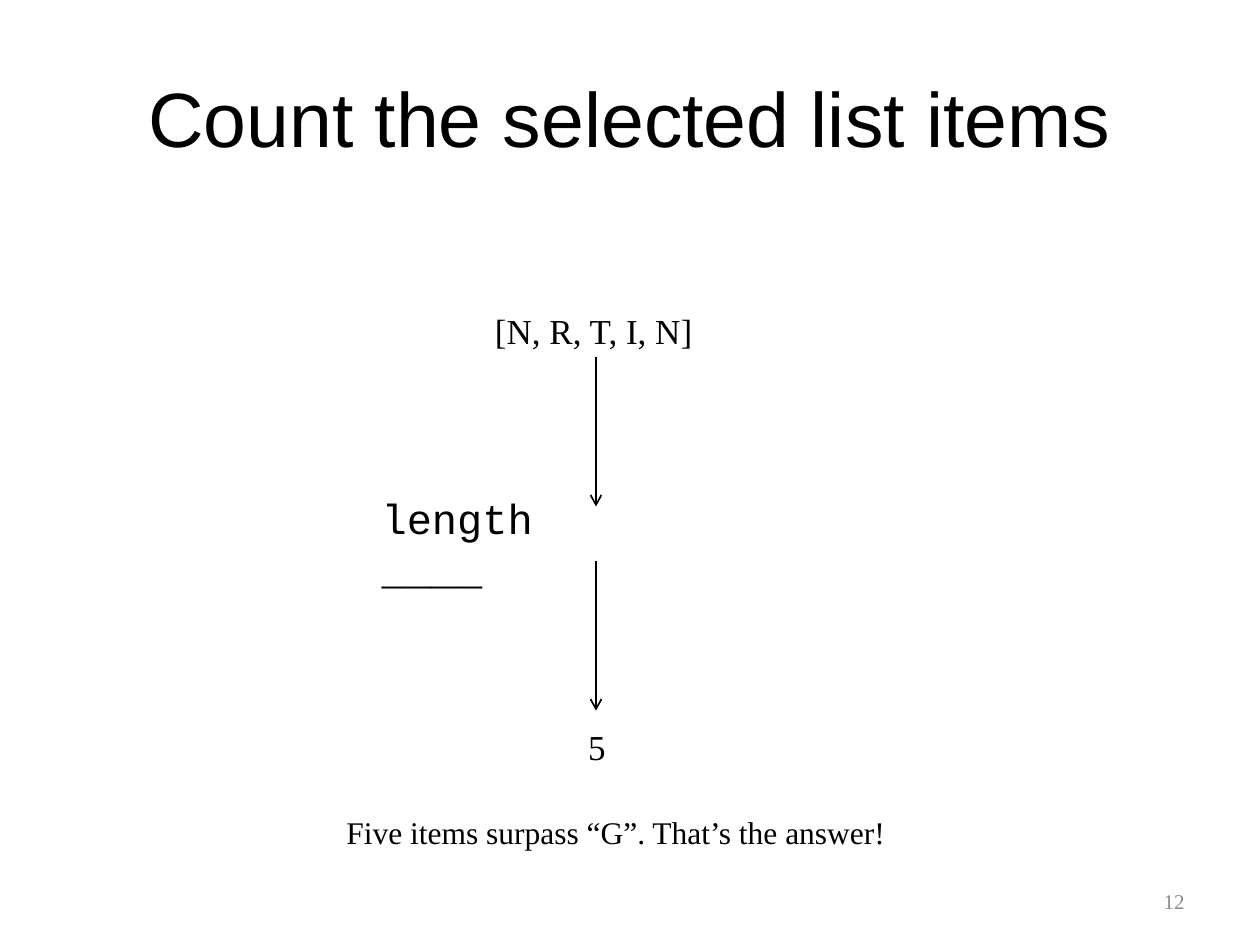
from dataclasses import dataclass

from lxml.etree import SubElement
from pptx import Presentation
from pptx.dml.color import RGBColor
from pptx.enum.shapes import MSO_CONNECTOR
from pptx.enum.text import MSO_ANCHOR, PP_ALIGN
from pptx.oxml.ns import qn
from pptx.util import Inches, Pt


@dataclass(frozen=True)
class Theme:
    ink: RGBColor = RGBColor(0, 0, 0)
    muted: RGBColor = RGBColor(0x8C, 0x8C, 0x8C)
    heading: str = "Arial"
    body: str = "Times New Roman"
    code: str = "Courier New"
    title_size: int = 44
    code_size: int = 24
    value_size: int = 20
    remark_size: int = 18
    number_size: int = 12
    line_width: int = 1


THEME = Theme()


def add_text(page, text, box, size, font=THEME.body, color=THEME.ink,
             align=PP_ALIGN.LEFT, anchor=MSO_ANCHOR.TOP, wrap=False):
    """Place one line of text in box: left, top, width, height in inches."""
    frame = page.shapes.add_textbox(*map(Inches, box)).text_frame
    frame.word_wrap = wrap
    frame.vertical_anchor = anchor
    para = frame.paragraphs[0]
    para.alignment = align
    span = para.add_run()
    span.text = text
    span.font.name = font
    span.font.size = Pt(size)
    span.font.color.rgb = color


def add_down_arrow(page, x, top, length):
    arrow = page.shapes.add_connector(
        MSO_CONNECTOR.STRAIGHT,
        Inches(x), Inches(top), Inches(x), Inches(top + length))
    arrow.line.color.rgb = THEME.ink
    arrow.line.width = Pt(THEME.line_width)
    SubElement(arrow.line._get_or_add_ln(), qn("a:tailEnd"), type="arrow")
    SubElement(arrow._element.spPr, qn("a:effectLst"))


def add_title(page, box):
    add_text(page, "Count the selected list items", box, THEME.title_size,
             font=THEME.heading, align=PP_ALIGN.CENTER,
             anchor=MSO_ANCHOR.MIDDLE, wrap=True)


def add_flow(page, box):
    """List, function and result, joined by two arrows."""
    left, top, width, height = box
    # Values at both ends
    add_text(page, "[N, R, T, I, N]", (left + 0.9, top, 1.78, 0.44),
             THEME.value_size)
    add_text(page, "5", (left + 1.64, top + height - 0.44, 0.34, 0.44),
             THEME.value_size)
    # Function, whose blank wraps to a second line
    add_text(page, "length ____", (left, top + 1.45, width - 0.43, 0.5),
             THEME.code_size, font=THEME.code, wrap=True)
    # Arrows into and out of the function
    for offset in (0.42, 2.04):
        add_down_arrow(page, left + 1.8, top + offset, 1.19)


def add_remark(page, box):
    add_text(page, "Five items surpass “G”. That’s the answer!", box,
             THEME.remark_size)


def add_page_number(page, box):
    add_text(page, "12", box, THEME.number_size, color=THEME.muted,
             align=PP_ALIGN.RIGHT, anchor=MSO_ANCHOR.MIDDLE, wrap=True)


def main():
    deck = Presentation()
    deck.slide_width, deck.slide_height = Inches(10), Inches(7.5)
    page = deck.slides.add_slide(deck.slide_layouts[6])
    add_title(page, (0.5, 0.3, 9, 1.25))
    add_page_number(page, (7.17, 6.95, 2.33, 0.4))
    add_flow(page, (2.93, 2.41, 2.68, 3.74))
    add_remark(page, (2.65, 6.4, 4.52, 0.4))
    deck.save("out.pptx")


if __name__ == "__main__":
    main()
